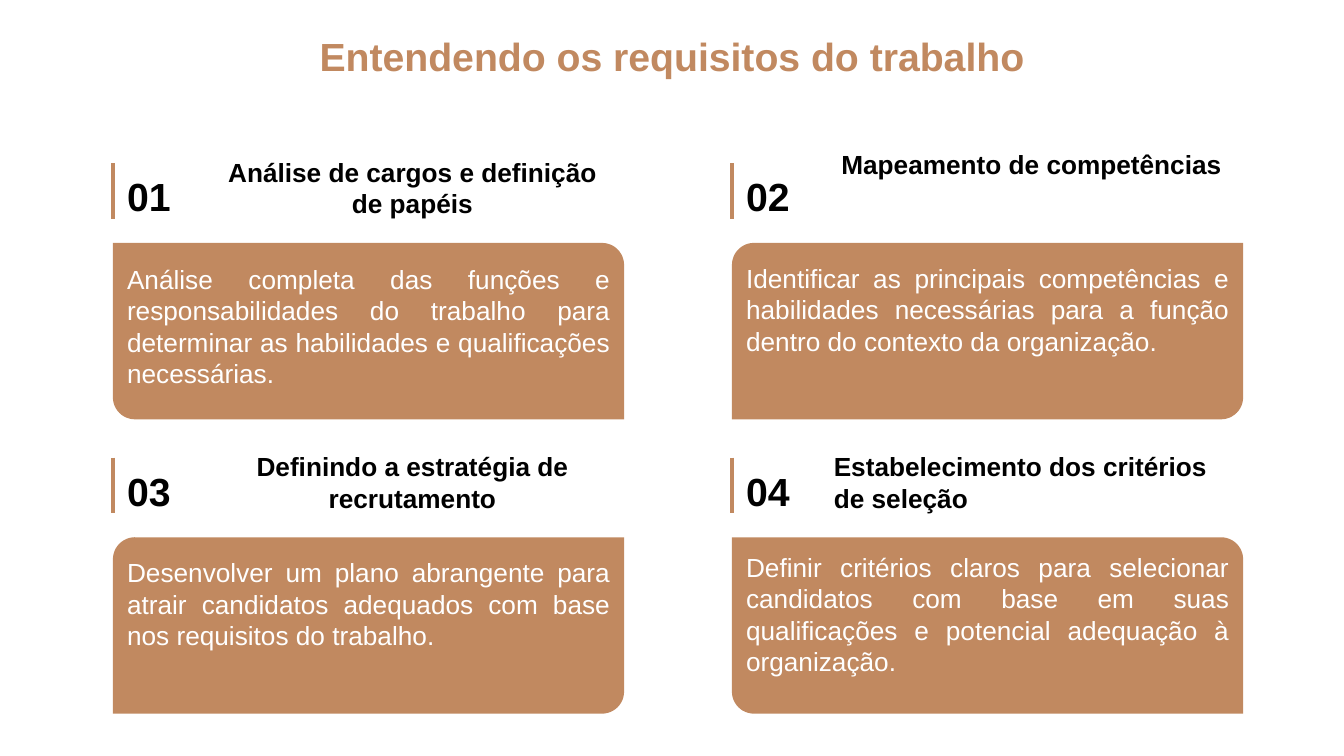
from dataclasses import dataclass

from lxml import etree
from pptx import Presentation
from pptx.dml.color import RGBColor
from pptx.enum.shapes import MSO_CONNECTOR, MSO_SHAPE
from pptx.enum.text import MSO_ANCHOR, MSO_AUTO_SIZE, PP_ALIGN
from pptx.oxml.ns import qn
from pptx.shapes.base import BaseShape
from pptx.slide import Slide
from pptx.util import Inches, Pt

LEFT, CENTER, JUSTIFY = PP_ALIGN.LEFT, PP_ALIGN.CENTER, PP_ALIGN.JUSTIFY
TOP = MSO_ANCHOR.TOP
GROW = MSO_AUTO_SIZE.SHAPE_TO_FIT_TEXT
DIAGONAL_CARD = MSO_SHAPE.ROUND_2_DIAG_RECTANGLE
STRAIGHT = MSO_CONNECTOR.STRAIGHT

COPPER, BLACK, WHITE = "C18960", "000000", "FFFFFF"
COLUMNS = (1.12, 7.26)
ROWS = (2.41, 5.33)
CARD_WIDTH, CARD_HEIGHT = 5.07, 1.75
CORNER = 0.125
INSET = Inches(0.14)


@dataclass(frozen=True)
class TextStyle:
    size: float
    color: str
    bold: bool = False
    align: PP_ALIGN = LEFT
    spacing: float = 1.0


@dataclass(frozen=True)
class Topic:
    heading: str
    body: str
    body_offset: float
    body_height: float
    heading_height: float = 0.91
    heading_align: PP_ALIGN = CENTER
    heading_spacing: float = 1.0


TITLE_STYLE = TextStyle(28, COPPER, True, CENTER, 0.8)
NUMBER_STYLE = TextStyle(28, BLACK, True, LEFT, 1.2)
BODY_STYLE = TextStyle(18.7, WHITE, False, JUSTIFY)

TOPICS = (
    Topic("Análise de cargos e definição de papéis",
          "Análise completa das funções e responsabilidades do trabalho para "
          "determinar as habilidades e qualificações necessárias.", 0.06, 1.54),
    Topic("Mapeamento de competências",
          "Identificar as principais competências e habilidades necessárias para "
          "a função dentro do contexto da organização.", 0.05, 1.22,
          heading_height=0.54, heading_spacing=0.8),
    Topic("Definindo a estratégia de recrutamento",
          "Desenvolver um plano abrangente para atrair candidatos adequados com "
          "base nos requisitos do trabalho.", 0.05, 1.22),
    Topic("Estabelecimento dos critérios de seleção",
          "Definir critérios claros para selecionar candidatos com base em suas "
          "qualificações e potencial adequação à organização.", 0, 1.54,
          heading_align=LEFT),
)


def rgb(color: str) -> RGBColor:
    return RGBColor.from_string(color)


def set_all(target: object, values: dict) -> None:
    for name, value in values.items():
        setattr(target, name, value)


def write_text(box: BaseShape, text: str, style: TextStyle) -> None:
    frame = box.text_frame
    set_all(frame, {
        "word_wrap": True, "auto_size": GROW, "vertical_anchor": TOP,
        "margin_left": INSET, "margin_right": INSET,
        "margin_top": INSET, "margin_bottom": INSET,
    })
    para = frame.paragraphs[0]
    set_all(para, {"alignment": style.align, "line_spacing": style.spacing,
                   "space_before": Pt(5)})
    span = para.add_run()
    span.text = text
    set_all(span.font, {"name": "Arial", "size": Pt(style.size), "bold": style.bold})
    span.font.color.rgb = rgb(style.color)


def add_text(page: Slide, left: float, top: float, width: float, height: float,
             text: str, style: TextStyle) -> None:
    box = page.shapes.add_textbox(Inches(left), Inches(top), Inches(width), Inches(height))
    write_text(box, text, style)


def add_title(page: Slide, text: str) -> None:
    title = page.shapes.title
    set_all(title, {"left": Inches(0.93), "top": Inches(0.27),
                    "width": Inches(11.47), "height": Inches(0.66)})
    write_text(title, text, TITLE_STYLE)


def add_card(page: Slide, left: float, top: float, round_top_left: bool) -> None:
    card = page.shapes.add_shape(DIAGONAL_CARD, Inches(left), Inches(top),
                                 Inches(CARD_WIDTH), Inches(CARD_HEIGHT))
    card.shadow.inherit = False
    card.fill.solid()
    card.fill.fore_color.rgb = rgb(COPPER)
    card.line.fill.background()
    card.adjustments[0] = CORNER if round_top_left else 0
    card.adjustments[1] = 0 if round_top_left else CORNER


def add_bar(page: Slide, left: float, top: float, height: float) -> None:
    bar = page.shapes.add_connector(STRAIGHT, Inches(left), Inches(top),
                                    Inches(left), Inches(top + height))
    bar.line.color.rgb = rgb(COPPER)
    bar.line.width = Pt(3)
    etree.SubElement(bar._element.spPr, qn("a:effectLst"))


def add_topic(page: Slide, index: int, topic: Topic) -> None:
    row, column = divmod(index, len(COLUMNS))
    left, top = COLUMNS[column], ROWS[row]
    heading_style = TextStyle(18.7, BLACK, True, topic.heading_align, topic.heading_spacing)
    add_card(page, left, top, row != column)
    add_bar(page, left, top - 0.79, 0.55)
    add_text(page, left, top - 0.93, 0.83, 0.81, f"{index + 1:02d}", NUMBER_STYLE)
    add_text(page, left + 0.87, top - 1, 4.2, topic.heading_height,
             topic.heading, heading_style)
    add_text(page, left, top + topic.body_offset, CARD_WIDTH, topic.body_height,
             topic.body, BODY_STYLE)


def main() -> None:
    deck = Presentation()
    set_all(deck, {"slide_width": Inches(13.33), "slide_height": Inches(7.5)})
    page = deck.slides.add_slide(deck.slide_layouts[5])
    page.background.fill.solid()
    page.background.fill.fore_color.rgb = rgb(WHITE)
    add_title(page, "Entendendo os requisitos do trabalho")
    for index, topic in enumerate(TOPICS):
        add_topic(page, index, topic)
    deck.save("out.pptx")


if __name__ == "__main__":
    main()
